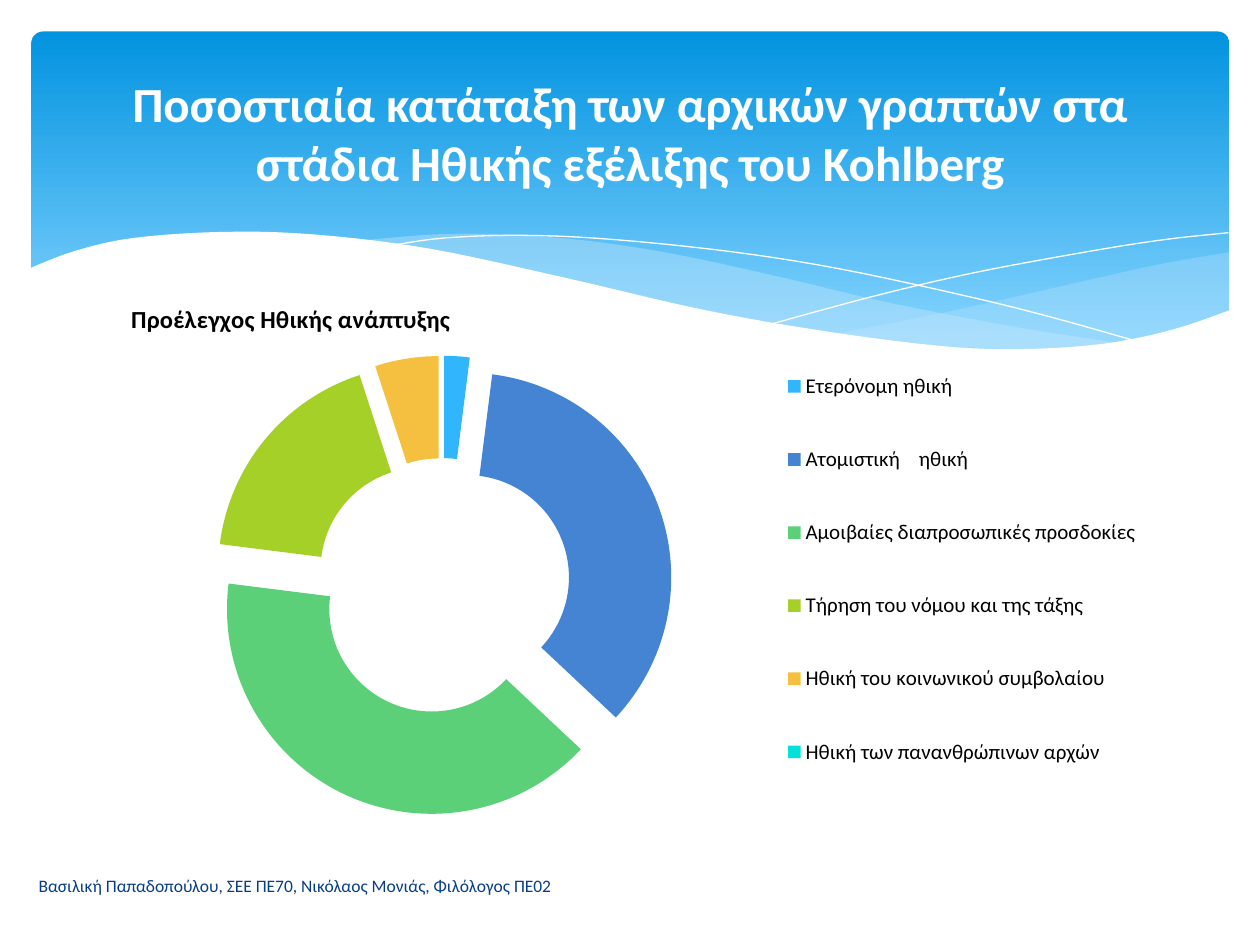
import pptx
import pptx.chart.data
import pptx.dml.color
import pptx.enum.chart
import pptx.enum.shapes
import pptx.enum.text
import pptx.oxml
import pptx.oxml.ns
import pptx.util

Pt = pptx.util.Pt
qn = pptx.oxml.ns.qn
FONT = "Calibri"
HEX = {
    "deep": "0293E0", "sky": "83D3FE", "pale": "C6E7FC", "white": "FFFFFF",
    "navy": "073E87", "black": "000000",
}
STAGES = [
    ("Ετερόνομη ηθική", 2, "31B6FD"),
    ("Ατομιστική    ηθική", 35, "4584D3"),
    ("Αμοιβαίες διαπροσωπικές προσδοκίες", 40, "5BD078"),
    ("Τήρηση του νόμου και της τάξης", 18, "A5D028"),
    ("Ηθική του κοινωνικού συμβολαίου", 5, "F5C040"),
    ("Ηθική των πανανθρώπινων αρχών", 0, "05E0DB"),
]
WAVES = {
    "right": [
        [(685, 126), (645, 133), (602, 142.5), (543, 156), (490, 167), (458, 173)],
        [(458, 173), (500, 178), (544, 181), (575, 181.5), (616, 178.5),
         (655, 170.5), (685, 160)],
    ],
    "mid": [
        [(625, 178.5), (563, 169), (490, 155), (435, 142), (371.5, 128),
         (317, 119.5), (269, 116), (230, 116), (188, 119.5)],
        [(188, 119.5), (242.5, 128), (305, 142), (363.5, 155), (427, 168),
         (482, 176.5), (530, 181), (571, 182), (625, 178.5)],
    ],
    "fall": [
        [(204.5, 122.5), (236, 118), (281.5, 116.5), (334, 119), (401, 126),
         (461, 135.5), (529, 150), (580, 162.5), (635, 178)],
    ],
    "rise": [
        [(423.5, 167), (482.5, 151), (540.5, 137.5), (605.5, 125.5),
         (647, 119), (684, 115)],
    ],
    "front": [
        [(-1.5, 135.5), (24.5, 125.5), (58, 118), (109.5, 114.5), (162, 116),
         (227, 124), (304, 140.5), (381.5, 158.5), (448.5, 170.5), (517.5, 179.5),
         (564.5, 181.5), (612, 178.5), (651.5, 170.5), (685.5, 159)],
        [(685.5, 219), (-1.5, 219)],
    ],
}


def rgb(key):
    """Give the colour for a name or a hex string."""
    return pptx.dml.color.RGBColor.from_string(HEX.get(key, key))


def style(font, size, key, bold=False):
    """Set face, size, colour and weight of a font."""
    font.name, font.size, font.bold = FONT, Pt(size), bold
    font.color.rgb = rgb(key)


def write(frame, text, size, key, bold=False):
    """Add one styled run to the first paragraph of a frame."""
    run = frame.paragraphs[0].add_run()
    run.text = text
    style(run.font, size, key, bold)


def smooth(knots, steps=5):
    """Sample a Catmull-Rom curve through the knots."""
    ext = [knots[0], *knots, knots[-1]]
    out = [knots[0]]
    for a, b, c, d in zip(ext, ext[1:], ext[2:], ext[3:]):
        for i in range(1, steps + 1):
            t = i / steps
            out.append(tuple(
                0.5 * (2 * q + (r - p) * t + (2 * p - 5 * q + 4 * r - s) * t ** 2
                       + (3 * q - p - 3 * r + s) * t ** 3)
                for p, q, r, s in zip(a, b, c, d)))
    return out


def wave(slide, box, name, fill=None, alpha=None):
    """Draw a named wave as a filled area or as a hairline."""
    dots = [(Pt(box[0] + x), Pt(box[1] + y))
            for part in WAVES[name] for x, y in smooth(part)]
    pen = slide.shapes.build_freeform(*dots[0], scale=1.0)
    pen.add_line_segments(dots[1:], close=fill is not None)
    shape = pen.convert_to_shape()
    shape.shadow.inherit = False
    if fill is None:
        shape.fill.background()
        shape.line.color.rgb = rgb("white")
        shape.line.width = Pt(0)
        return
    shape.line.fill.background()
    shape.fill.solid()
    shape.fill.fore_color.rgb = rgb(fill)
    if alpha:
        tint = shape._element.spPr.find(qn("a:solidFill"))[0]
        tint.append(pptx.oxml.parse_xml(
            f'<a:alpha {pptx.oxml.ns.nsdecls("a")} val="{alpha * 1000}"/>'))


def banner(slide, box):
    """Draw the gradient band and its waves."""
    band = slide.shapes.add_shape(
        pptx.enum.shapes.MSO_SHAPE.ROUNDED_RECTANGLE, *map(Pt, box))
    band.adjustments[0] = 0.034
    band.shadow.inherit = False
    band.line.fill.background()
    band.fill.gradient()
    band.fill.gradient_angle = 270
    for stop, key, pos in zip(band.fill.gradient_stops, ("deep", "sky"), (0, 0.9)):
        stop.color.rgb = rgb(key)
        stop.position = pos
    wave(slide, box, "right", "pale", 29)
    wave(slide, box, "mid", "pale", 40)
    wave(slide, box, "fall")
    wave(slide, box, "rise")
    wave(slide, box, "front", "white")


def heading(slide, box, text):
    """Place the title in front of the banner."""
    title = slide.shapes.title
    slide.shapes._spTree.append(title._element)
    title.left, title.top, title.width, title.height = map(Pt, box)
    frame = title.text_frame
    frame.word_wrap = True
    frame.vertical_anchor = pptx.enum.text.MSO_ANCHOR.MIDDLE
    frame.paragraphs[0].alignment = pptx.enum.text.PP_ALIGN.CENTER
    write(frame, text, 28, "white", True)


def footer(slide, box, text):
    """Place the line with the authors."""
    frame = slide.shapes.add_textbox(*map(Pt, box)).text_frame
    frame.word_wrap = True
    frame.vertical_anchor = pptx.enum.text.MSO_ANCHOR.MIDDLE
    write(frame, text, 10, "navy")


def lay(node, index, **part):
    """Fix a chart part at fractions of the chart area."""
    old = node.find(qn("c:layout"))
    if old is not None:
        node.remove(old)
    modes = "".join(f'<c:{k}Mode val="edge"/>' for k in part if k in "xy")
    sizes = "".join(f'<c:{k} val="{v}"/>' for k, v in part.items())
    inner = '<c:layoutTarget val="inner"/>' if node.tag == qn("c:plotArea") else ""
    node.insert(index, pptx.oxml.parse_xml(
        f'<c:layout {pptx.oxml.ns.nsdecls("c")}><c:manualLayout>'
        f'{inner}{modes}{sizes}</c:manualLayout></c:layout>'))


def ring(slide, box, text):
    """Place the exploded doughnut chart with title and legend."""
    data = pptx.chart.data.CategoryChartData()
    data.categories = [name for name, _, _ in STAGES]
    data.add_series("Series 1", [share for _, share, _ in STAGES])
    chart = slide.shapes.add_chart(
        pptx.enum.chart.XL_CHART_TYPE.DOUGHNUT, *map(Pt, box), data).chart
    style(chart.font, 10, "black")
    chart.has_title = True
    write(chart.chart_title.text_frame, text, 14, "black", True)
    chart.chart_title.include_in_layout = False
    chart.has_legend = True
    chart.legend.position = pptx.enum.chart.XL_LEGEND_POSITION.RIGHT
    chart.legend.include_in_layout = False
    style(chart.legend.font, 12, "black")
    plot = chart.plots[0]
    plot.vary_by_categories = True
    row = plot.series[0]
    row._element.find(qn("c:tx")).addnext(pptx.oxml.parse_xml(
        f'<c:explosion {pptx.oxml.ns.nsdecls("c")} val="25"/>'))
    for i, (_, _, tint) in enumerate(STAGES):
        fill = row.points[i].format.fill
        fill.solid()
        fill.fore_color.rgb = rgb(tint)
    lay(chart.chart_title._element, 1, x=0.03, y=0.04)
    lay(chart.legend._element, 1, x=0.63, y=0.09, w=0.36, h=0.86)
    lay(chart._chartSpace.chart.plotArea, 0, x=0.11, y=0.14, w=0.43, h=0.82)


def main():
    """Build and save the slide."""
    deck = pptx.Presentation()
    deck.slide_width, deck.slide_height = Pt(720), Pt(540)
    slide = deck.slides.add_slide(deck.slide_layouts[5])
    banner(slide, (18, 18, 684.5, 194.5))
    footer(slide, (15, 492.5, 339, 27.5),
           "Βασιλική Παπαδοπούλου, ΣΕΕ ΠΕ70, Νικόλαος Μονιάς, Φιλόλογος ΠΕ02")
    heading(slide, (36, 26.5, 648, 98.5),
            "Ποσοστιαία κατάταξη των αρχικών γραπτών στα στάδια Ηθικής "
            "εξέλιξης του Kohlberg")
    ring(slide, (54, 157, 612, 323.5), "Προέλεγχος Ηθικής ανάπτυξης")
    deck.save("out.pptx")


if __name__ == "__main__":
    main()
